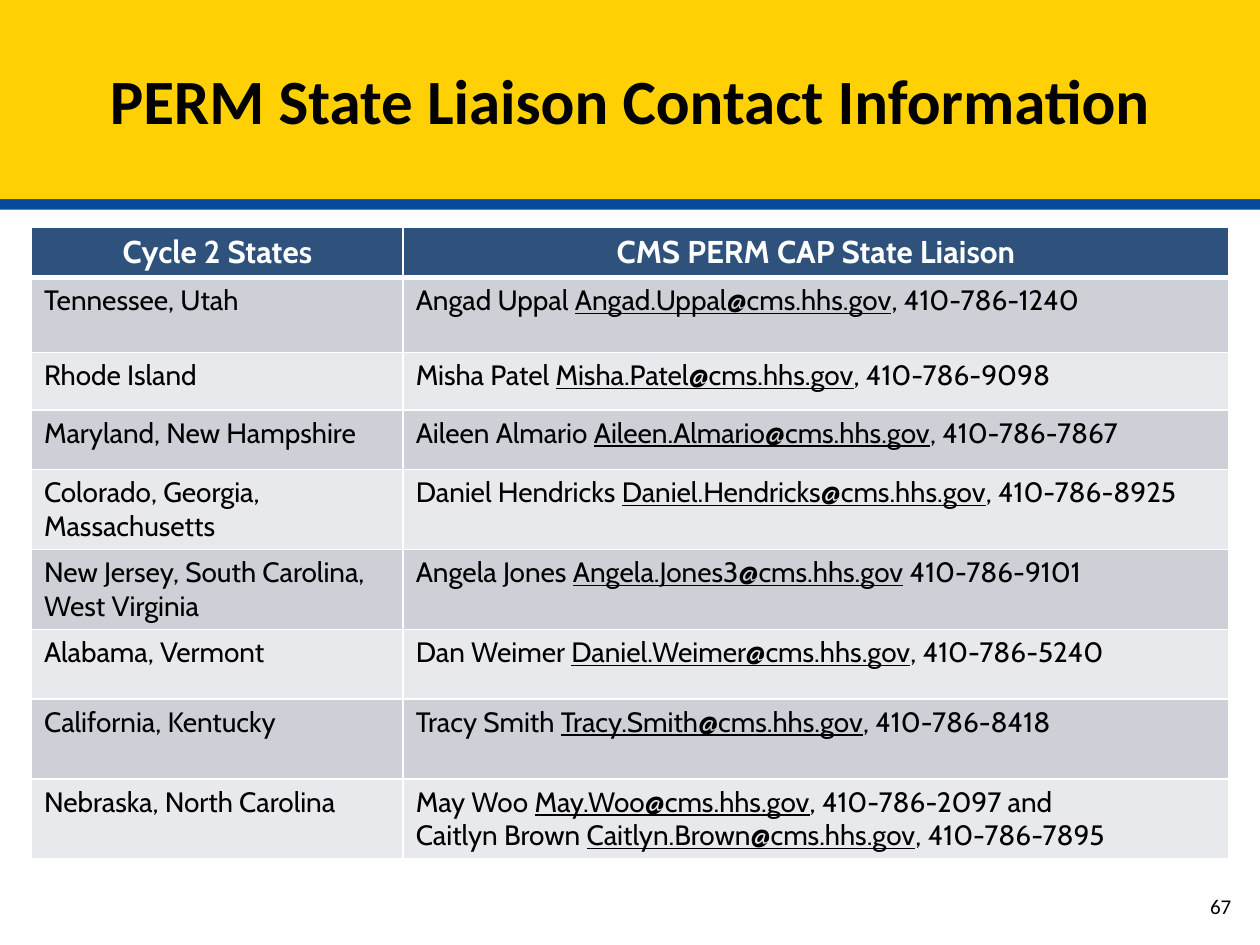
from lxml.etree import SubElement
from pptx import Presentation
from pptx.dml.color import RGBColor
from pptx.enum.text import MSO_ANCHOR as Anchor, PP_ALIGN as Align
from pptx.oxml.ns import qn
from pptx.util import Pt

BLACK, WHITE = "000000", "FFFFFF"
GOLD, BLUE, NAVY = "FFD004", "084A9C", "2F527D"
BANDS = ("CDD1D7", "E8E9EC")
COLUMN_WIDTHS = (212.4, 471.6)
HEADINGS = ("Cycle 2 States", "CMS PERM CAP State Liaison")
LIAISONS = [
    (43, "Tennessee, Utah", [("Angad Uppal ", "Angad.Uppal", ", 410-786-1240")]),
    (33, "Rhode Island", [("Misha Patel ", "Misha.Patel", ", 410-786-9098")]),
    (33.8, "Maryland, New Hampshire",
     [("Aileen Almario ", "Aileen.Almario", ", 410-786-7867")]),
    (45.7, "Colorado, Georgia, Massachusetts",
     [("Daniel Hendricks ", "Daniel.Hendricks", ", 410-786-8925")]),
    (45.7, "New Jersey, South Carolina, West Virginia",
     [("Angela Jones ", "Angela.Jones3", " 410-786-9101")]),
    (39.8, "Alabama, Vermont", [("Dan Weimer ", "Daniel.Weimer", ", 410-786-5240")]),
    (45.7, "California, Kentucky", [("Tracy Smith ", "Tracy.Smith", ", 410-786-8418")]),
    (45.7, "Nebraska, North Carolina",
     [("May Woo ", "May.Woo", ", 410-786-2097 and"),
      ("Caitlyn Brown ", "Caitlyn.Brown", ", 410-786-7895")]),
]


def color(hex_code):
    return RGBColor.from_string(hex_code)


class ContactSlide:
    """Holds the text style and the slide, and adds each kind of element."""

    def __init__(self, deck):
        self.heading_font, self.table_font = "Calibri", "Cabin"
        self.slide = deck.slides.add_slide(deck.slide_layouts[5])

    def add_text(self, frame, paragraphs, font, size, ink=BLACK, bold=False, align=Align.LEFT):
        for index, pieces in enumerate(paragraphs):
            paragraph = frame.add_paragraph() if index else frame.paragraphs[0]
            paragraph.alignment = align
            for text, underlined in pieces:
                run = paragraph.add_run()
                run.text = text
                run.font.name, run.font.size = font, Pt(size)
                run.font.bold, run.font.underline = bold, underlined
                run.font.color.rgb = color(ink)

    def title(self, text):
        banner = self.slide.shapes.title
        banner.left, banner.top, banner.width, banner.height = Pt(0), Pt(0), Pt(720), Pt(113.8)
        banner.fill.solid()
        banner.fill.fore_color.rgb = color(GOLD)
        effects = SubElement(banner.element.spPr, qn("a:effectLst"))
        shadow = SubElement(effects, qn("a:outerShdw"), blurRad="0", dist=str(Pt(6)),
                            dir="5400000", algn="t", rotWithShape="0")
        SubElement(shadow, qn("a:srgbClr"), val=BLUE)
        banner.text_frame.vertical_anchor = Anchor.MIDDLE
        self.add_text(banner.text_frame, [[(text, False)]], self.heading_font, 36,
                      bold=True, align=Align.CENTER)

    def page_number(self, number):
        box = self.slide.shapes.add_textbox(Pt(542.9), Pt(503.3), Pt(167.8), Pt(28.8))
        box.text_frame.word_wrap = True
        box.text_frame.vertical_anchor = Anchor.MIDDLE
        self.add_text(box.text_frame, [[(number, False)]], self.heading_font, 12,
                      align=Align.RIGHT)

    def cell(self, cell, paragraphs, fill, bottom=1, **style):
        properties = cell._tc.get_or_add_tcPr()
        for side, width in (("L", 1), ("R", 1), ("T", 1), ("B", bottom)):
            line = SubElement(properties, qn(f"a:ln{side}"), w=str(Pt(width)))
            SubElement(SubElement(line, qn("a:solidFill")), qn("a:srgbClr"), val=WHITE)
        cell.fill.solid()
        cell.fill.fore_color.rgb = color(fill)
        self.add_text(cell.text_frame, paragraphs, self.table_font, **style)

    def table(self, headings, liaisons):
        heights = [28] + [height for height, *_ in liaisons]
        contacts = self.slide.shapes.add_table(
            len(heights), len(headings), Pt(18), Pt(129.6),
            Pt(sum(COLUMN_WIDTHS)), Pt(sum(heights))).table
        for column, width in zip(contacts.columns, COLUMN_WIDTHS):
            column.width = Pt(width)
        for row, height in zip(contacts.rows, heights):
            row.height = Pt(height)
        for column, heading in enumerate(headings):
            self.cell(contacts.cell(0, column), [[(heading, False)]], NAVY, bottom=3,
                      size=18, ink=WHITE, bold=True, align=Align.CENTER)
        for row, (_, states, people) in enumerate(liaisons, 1):
            band = BANDS[(row - 1) % 2]
            details = [[(name, False), (f"{mailbox}@cms.hhs.gov", True), (phone, False)]
                       for name, mailbox, phone in people]
            self.cell(contacts.cell(row, 0), [[(states, False)]], band, size=16)
            self.cell(contacts.cell(row, 1), details, band, size=16)


def main():
    deck = Presentation()
    deck.slide_width, deck.slide_height = Pt(720), Pt(540)
    contact_slide = ContactSlide(deck)
    contact_slide.title("PERM State Liaison Contact Information")
    contact_slide.page_number("67")
    contact_slide.table(HEADINGS, LIAISONS)
    deck.save("out.pptx")


if __name__ == "__main__":
    main()
